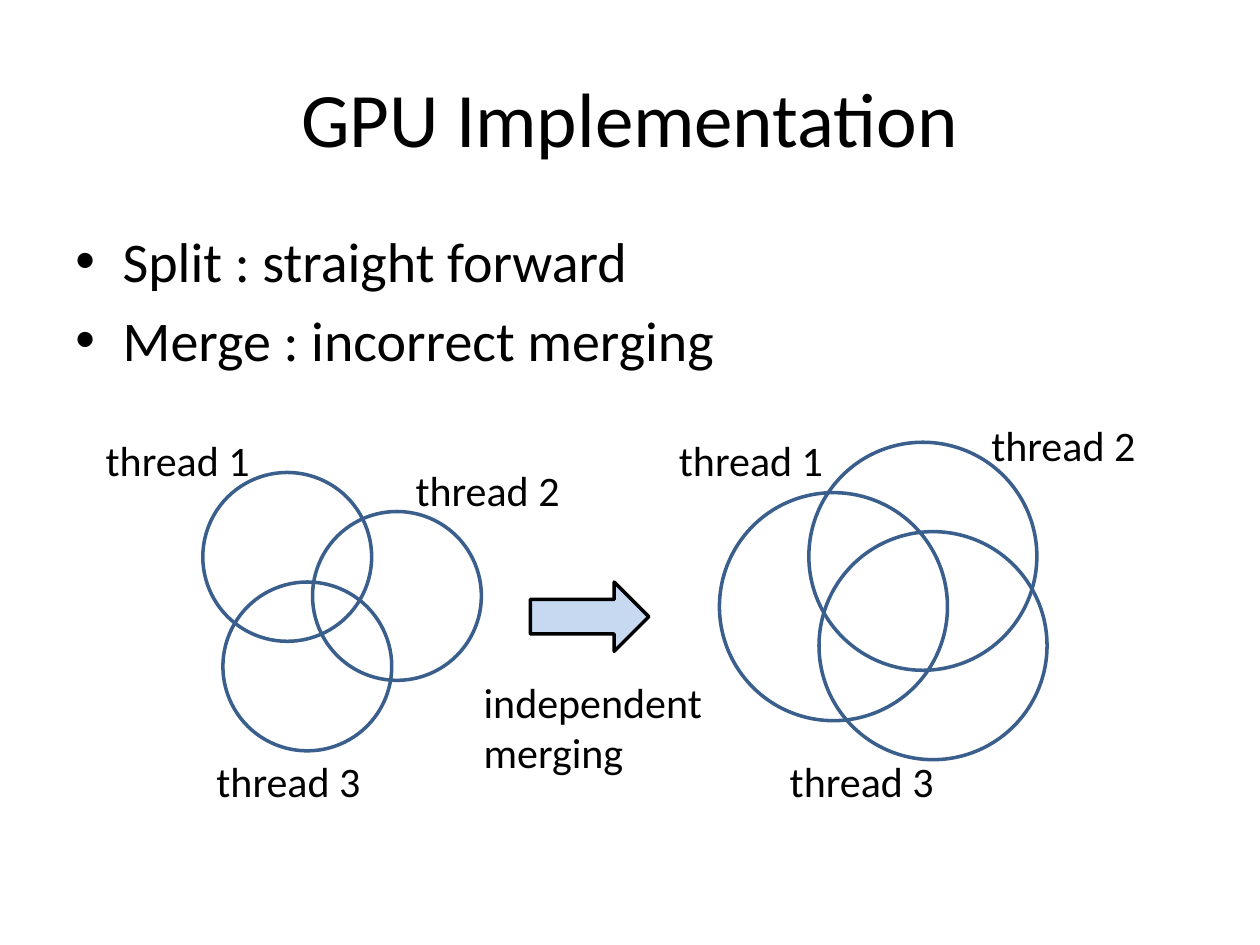
from lxml import etree
from pptx import Presentation
from pptx.dml.color import RGBColor
from pptx.enum import shapes, text
from pptx.oxml import ns
from pptx.util import Pt

FONT = "Calibri"
BLACK, OUTLINE, ARROW_FILL = "000000", "3A5F8C", "C6D9F1"

TITLE = "GPU Implementation"
BULLETS = ["Split : straight forward", "Merge : incorrect merging"]
CAPTION = ["independent", "merging"]
LABEL_SIZE = (97.9, 36)

# Each thread: name, left and top of its circle, left and top of its label
GROUPS = [
    {"diameter": 96.5, "threads": [
        ("thread 1", (115.9, 270), (52.6, 244.8)),
        ("thread 3", (127.4, 332.6), (115.9, 428.4)),
        ("thread 2", (178.6, 292.3), (229.7, 262.1))]},
    {"diameter": 130.3, "threads": [
        ("thread 1", (411.1, 281.5), (380.2, 244.8)),
        ("thread 2", (462.2, 252.7), (558.7, 236.2)),
        ("thread 3", (468, 303.8), (443.5, 428.4))]},
]


def color(value):
    return RGBColor.from_string(value)


def add_text(page, lines, area, size, align=text.PP_ALIGN.LEFT, wrap=True,
             anchor=text.MSO_ANCHOR.TOP):
    box = page.shapes.add_textbox(*map(Pt, area))
    frame = box.text_frame
    frame.text = "\n".join(lines)
    frame.word_wrap = wrap
    frame.vertical_anchor = anchor
    for para in frame.paragraphs:
        para.alignment = align
        for span in para.runs:
            span.font.name = FONT
            span.font.size = Pt(size)
            span.font.color.rgb = color(BLACK)
    return box


def add_bullet(para, indent):
    properties = para._p.get_or_add_pPr()
    properties.set("marL", str(Pt(indent)))
    properties.set("indent", str(-Pt(indent)))
    etree.SubElement(properties, ns.qn("a:buFont"), typeface="Arial")
    etree.SubElement(properties, ns.qn("a:buChar"), char="•")


def add_outline(page, kind, area, line, fill=None):
    shape = page.shapes.add_shape(kind, *map(Pt, area))
    shape.shadow.inherit = False
    if fill:
        shape.fill.solid()
        shape.fill.fore_color.rgb = color(fill)
    else:
        shape.fill.background()
    shape.line.color.rgb = color(line)
    shape.line.width = Pt(2)


def main():
    deck = Presentation()
    deck.slide_width, deck.slide_height = Pt(720), Pt(540)
    page = deck.slides.add_slide(deck.slide_layouts[6])

    add_text(page, [TITLE], (36, 21.6, 648, 90), 44,
             text.PP_ALIGN.CENTER, anchor=text.MSO_ANCHOR.MIDDLE)
    body = add_text(page, BULLETS, (36, 126, 648, 356.4), 32)
    for para in body.text_frame.paragraphs:
        para.space_before = Pt(6.4)
        add_bullet(para, 27)

    for group in GROUPS:
        size = (group["diameter"],) * 2
        for name, circle, label in group["threads"]:
            add_outline(page, shapes.MSO_SHAPE.OVAL, circle + size, OUTLINE)
            add_text(page, [name], label + LABEL_SIZE, 24,
                     text.PP_ALIGN.CENTER, wrap=False)

    add_outline(page, shapes.MSO_SHAPE.RIGHT_ARROW, (303.1, 332.6, 67.7, 39.6),
                BLACK, ARROW_FILL)
    add_text(page, CAPTION, (269.3, 383, 153.4, 65.5), 24)
    deck.save("out.pptx")


if __name__ == "__main__":
    main()
